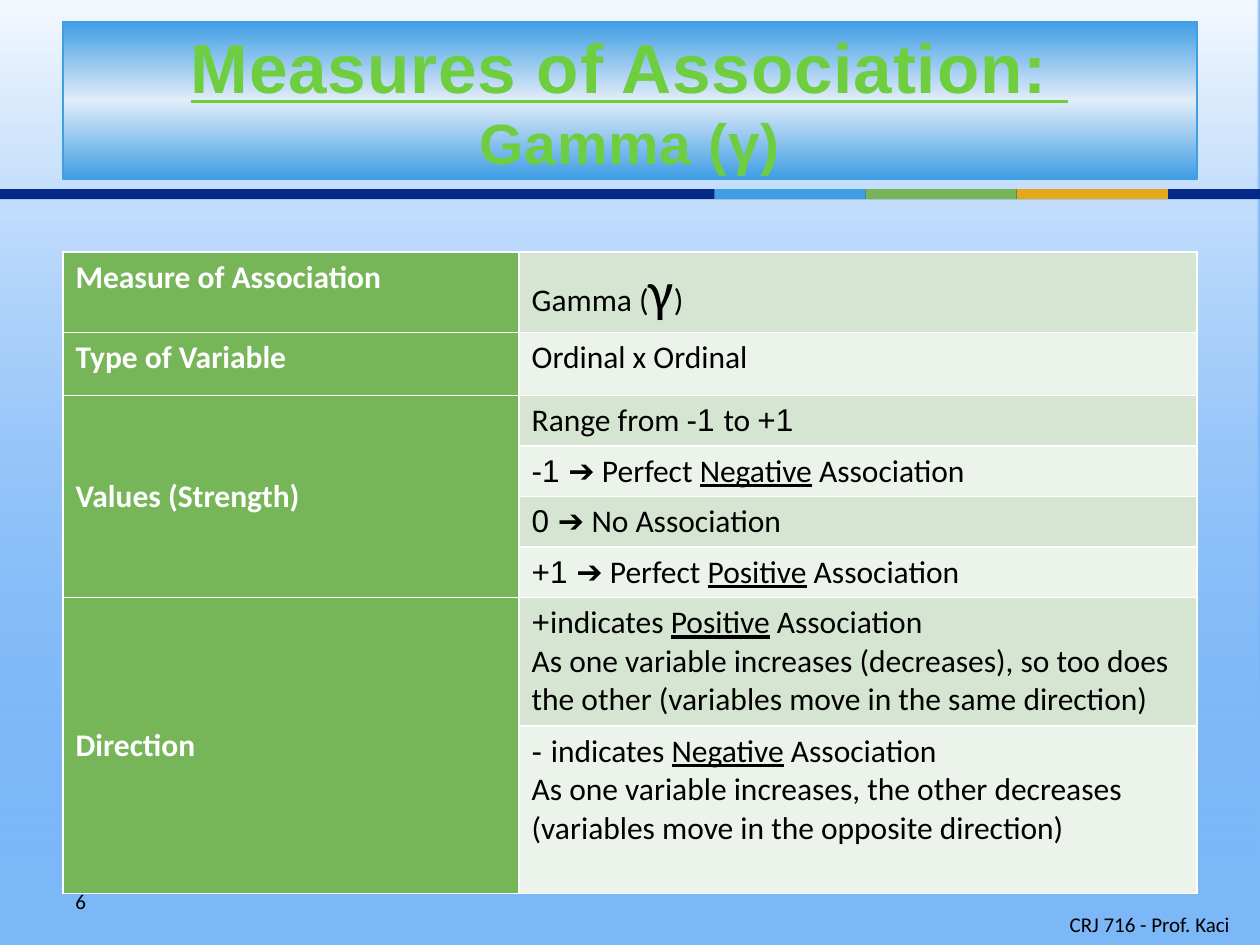
"""Build the slide on Gamma as a measure of association."""
from lxml.etree import SubElement
from pptx import Presentation
from pptx.dml.color import RGBColor
from pptx.enum.shapes import MSO_SHAPE
from pptx.enum.text import MSO_ANCHOR as ANCHOR, PP_ALIGN as ALIGN
from pptx.oxml.ns import qn
from pptx.util import Inches, Pt

SKY = RGBColor(0x7C, 0xB7, 0xF8)
NAVY = RGBColor(0x04, 0x29, 0x86)
BLUE = RGBColor(0x3F, 0x9E, 0xE4)
PALE_BLUE = RGBColor(0xE2, 0xEC, 0xF9)
GREEN = RGBColor(0x77, 0xB5, 0x59)
GOLD = RGBColor(0xE4, 0xA8, 0x1B)
LIME = RGBColor(0x6E, 0xCE, 0x40)
DARK_LIME = RGBColor(0x4D, 0x95, 0x2A)
BANDS = (RGBColor(0xD6, 0xE5, 0xD1), RGBColor(0xEC, 0xF3, 0xEA))
WHITE = RGBColor(0xFF, 0xFF, 0xFF)
BLACK = RGBColor(0x00, 0x00, 0x00)

WIDTH, HEIGHT = 10, 7.5
MARGIN = 0.05 * WIDTH
INNER = WIDTH - 2 * MARGIN
COLUMNS = (3.62, 5.38)
ROWS = (0.64, 0.5, 0.4, 0.4, 0.4, 0.4, 1.02, 1.33)

SMALL = {"size": Pt(12), "name": "Calibri"}
BODY = {"size": Pt(18), "name": "Calibri", "bold": False}
LABEL = {**BODY, "bold": True}
ARIAL = {**BODY, "name": "Arial"}
UNDER = {**BODY, "underline": True}
BIG = {**BODY, "size": Pt(32)}
HEADING = {"size": Pt(39.6), "name": "Arial", "bold": True, "underline": True}
SUBHEADING = {**HEADING, "size": Pt(32.4), "underline": False}

LABELS = [
    (0, 1, "Measure of Association", ANCHOR.TOP),
    (1, 1, "Type of Variable", ANCHOR.TOP),
    (2, 4, "Values (Strength)", ANCHOR.MIDDLE),
    (6, 2, "Direction", ANCHOR.MIDDLE),
]


def association(sign, lead, kind):
    """Return the runs that tie a sign to a kind of association."""
    return [(sign, ARIAL), (lead, BODY), (kind, UNDER), (" Association", BODY)]


DETAILS = [
    [[("Gamma (", BODY), ("γ", BIG), (")", BODY)]],
    [[("Ordinal x Ordinal", BODY)]],
    [[("Range from ", BODY), ("-1 ", ARIAL), ("to ", BODY), ("+1", ARIAL)]],
    [association("-1 ", "➔ Perfect ", "Negative")],
    [[("0 ", ARIAL), ("➔ No Association", BODY)]],
    [association("+1 ", "➔ Perfect ", "Positive")],
    [association("+", "indicates ", "Positive"),
     [("As one variable increases (decreases), so too does the other "
       "(variables move in the same direction)", BODY)]],
    [association("- ", "indicates ", "Negative"),
     [("As one variable increases, the other decreases "
       "(variables move in the opposite direction)", BODY)]],
]


def set_gradient(fill, element, stops, angle):
    """Give a fill a linear gradient of (position, colour, opacity) stops."""
    fill.gradient()
    fill.gradient_angle = angle
    stop_list = next(element.iter(qn("a:gsLst")))
    for old in list(stop_list):
        stop_list.remove(old)
    for position, color, opacity in stops:
        stop = SubElement(stop_list, qn("a:gs"), pos=str(position * 1000))
        clr = SubElement(stop, qn("a:srgbClr"), val=str(color))
        if opacity < 100:
            SubElement(clr, qn("a:alpha"), val=str(opacity * 1000))


def add_run(p, text, fmt, color=BLACK):
    """Add a formatted run to a paragraph."""
    r = p.add_run()
    r.text = text
    for name, value in fmt.items():
        setattr(r.font, name, value)
    r.font.color.rgb = color
    return r


def add_rect(s, left, top, width, height, color=None):
    """Add a rectangle without outline or shadow."""
    sp = s.shapes.add_shape(MSO_SHAPE.RECTANGLE, Inches(left), Inches(top),
                            Inches(width), Inches(height))
    sp.shadow.inherit = False
    sp.line.fill.background()
    if color is not None:
        sp.fill.solid()
        sp.fill.fore_color.rgb = color
    return sp


def add_backdrop(s):
    """Paint the sky and the coloured rule under the title."""
    s.background.fill.solid()
    s.background.fill.fore_color.rgb = SKY
    sky = add_rect(s, -0.01, 0, WIDTH, 6.88)
    set_gradient(sky.fill, sky._element, [(1, SKY, 0), (100, WHITE, 92)], 90)
    top, thickness, step = 0.2 * HEIGHT, 0.08, 0.12 * WIDTH
    add_rect(s, 0, top, WIDTH, thickness, NAVY)
    for i, color in enumerate((BLUE, GREEN, GOLD)):
        add_rect(s, 5.67 + i * step, top, step, thickness, color)


def add_title(s):
    """Add the two-line title on its gradient panel."""
    sp = add_rect(s, MARGIN, 0.17, INNER, 1.25)
    set_gradient(sp.fill, sp._element,
                 [(0, BLUE, 100), (50, PALE_BLUE, 100), (100, BLUE, 100)], 270)
    sp.line.color.rgb = BLUE
    sp.line.width = Pt(1)
    tf = sp.text_frame
    tf.word_wrap = True
    tf.vertical_anchor = ANCHOR.MIDDLE
    p = tf.paragraphs[0]
    p.alignment = ALIGN.CENTER
    first = add_run(p, "Measures of Association: ", HEADING)
    p.add_line_break()
    for r in (first, add_run(p, "Gamma (γ)", SUBHEADING)):
        set_gradient(r.font.fill, r._r,
                     [(25, LIME, 100), (100, DARK_LIME, 100)], 270)
        r._r.get_or_add_rPr().set("spc", "50")


def add_note(s, text, left, top, width, height, align):
    """Add a small line of text at the foot of the slide."""
    tf = s.shapes.add_textbox(Inches(left), Inches(top), Inches(width),
                              Inches(height)).text_frame
    tf.word_wrap = True
    tf.vertical_anchor = ANCHOR.MIDDLE
    p = tf.paragraphs[0]
    p.alignment = align
    add_run(p, text, SMALL)


def style_cell(cell, color):
    """Give a cell white borders and a plain fill."""
    tc_pr = cell._tc.get_or_add_tcPr()
    for side in ("lnL", "lnR", "lnT", "lnB"):
        ln = SubElement(tc_pr, qn(f"a:{side}"), w=str(Pt(1)))
        fill = SubElement(ln, qn("a:solidFill"))
        SubElement(fill, qn("a:srgbClr"), val=str(WHITE))
    cell.fill.solid()
    cell.fill.fore_color.rgb = color


def add_gamma_table(s):
    """Add the table of labels and details."""
    table = s.shapes.add_table(len(ROWS), len(COLUMNS), Inches(MARGIN), Inches(2),
                               Inches(INNER), Inches(sum(ROWS))).table
    table.first_row = table.horz_banding = False
    for column, width in zip(table.columns, COLUMNS):
        column.width = Inches(width)
    for i, (height, paragraphs) in enumerate(zip(ROWS, DETAILS)):
        table.rows[i].height = Inches(height)
        style_cell(table.cell(i, 0), GREEN)
        cell = table.cell(i, 1)
        style_cell(cell, BANDS[i % 2])
        tf = cell.text_frame
        for j, runs in enumerate(paragraphs):
            p = tf.add_paragraph() if j else tf.paragraphs[0]
            for text, fmt in runs:
                add_run(p, text, fmt)
    for row, span, text, anchor in LABELS:
        cell = table.cell(row, 0)
        if span > 1:
            cell.merge(table.cell(row + span - 1, 0))
        cell.vertical_anchor = anchor
        add_run(cell.text_frame.paragraphs[0], text, LABEL, WHITE)


def main():
    """Build and save the slide."""
    prs = Presentation()
    prs.slide_width, prs.slide_height = Inches(WIDTH), Inches(HEIGHT)
    s = prs.slides.add_slide(prs.slide_layouts[6])
    add_backdrop(s)
    add_note(s, "6", MARGIN, 6.95, 2.33, 0.4, ALIGN.LEFT)
    add_title(s)
    add_note(s, "CRJ 716 - Prof. Kaci", 8.25, 7.17, 1.75, 0.33, ALIGN.CENTER)
    add_gamma_table(s)
    prs.save("out.pptx")


if __name__ == "__main__":
    main()
